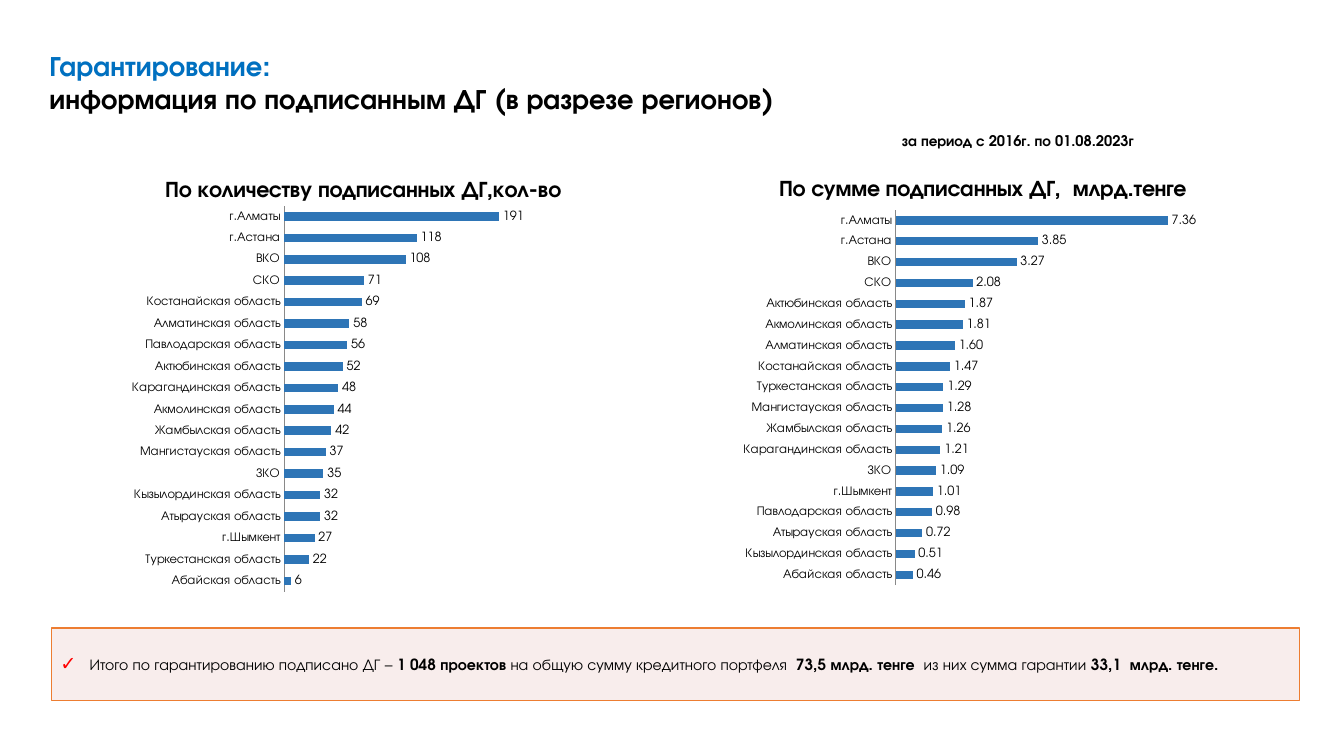
from dataclasses import dataclass

from lxml.etree import SubElement
from pptx import Presentation
from pptx.chart.data import CategoryChartData
from pptx.dml.color import RGBColor
from pptx.enum.chart import XL_CHART_TYPE as ChartType
from pptx.enum.chart import XL_LABEL_POSITION as LabelPosition
from pptx.enum.chart import XL_TICK_MARK as TickMark
from pptx.enum.text import MSO_ANCHOR as Anchor
from pptx.enum.text import MSO_AUTO_SIZE as AutoSize
from pptx.enum.text import PP_ALIGN as Align
from pptx.oxml.ns import qn
from pptx.util import Cm, Pt


@dataclass(frozen=True)
class Theme:
    font: str = "TeX Gyre Adventor"
    black: str = "000000"
    heading: str = "0070C0"
    bar: str = "2E75B6"
    axis: str = "898989"
    summary_fill: str = "F2DCDB"
    summary_line: str = "ED7D31"
    check: str = "FF0000"
    title_size: float = 20
    chart_title_size: float = 16
    summary_size: float = 11
    period_size: float = 10.5
    label_size: float = 9


@dataclass(frozen=True)
class Box:
    left: float
    top: float
    width: float
    height: float


@dataclass(frozen=True)
class RegionChart:
    title: str
    box: Box
    plot: dict[str, float]
    title_corner: dict[str, float]
    axis_max: float
    number_format: str
    values: dict[str, float]


THEME = Theme()

CHARTS = (
    RegionChart(
        "По количеству подписанных ДГ,кол-во",
        Box(1.7, 3.91, 14.76, 11.58),
        {"x": 0.37, "y": 0.11, "w": 0.48, "h": 0.84},
        {"x": 0.16, "y": 0.04},
        250,
        "General",
        {
            "Абайская область": 6, "Туркестанская область": 22, "г.Шымкент": 27,
            "Атырауская область": 32, "Кызылординская область": 32, "ЗКО": 35,
            "Мангистауская область": 37, "Жамбылская область": 42,
            "Акмолинская область": 44, "Карагандинская область": 48,
            "Актюбинская область": 52, "Павлодарская область": 56,
            "Алматинская область": 58, "Костанайская область": 69,
            "СКО": 71, "ВКО": 108, "г.Астана": 118, "г.Алматы": 191,
        },
    ),
    RegionChart(
        "По сумме подписанных ДГ,  млрд.тенге",
        Box(16.64, 4.14, 15.21, 11.53),
        {"x": 0.39, "y": 0.1, "w": 0.49, "h": 0.82},
        {"x": 0.19, "y": 0.02},
        8,
        "#,##0.00",
        {
            "Абайская область": 0.46, "Кызылординская область": 0.51,
            "Атырауская область": 0.72, "Павлодарская область": 0.98,
            "г.Шымкент": 1.01, "ЗКО": 1.09, "Карагандинская область": 1.21,
            "Жамбылская область": 1.26, "Мангистауская область": 1.28,
            "Туркестанская область": 1.29, "Костанайская область": 1.47,
            "Алматинская область": 1.6, "Акмолинская область": 1.81,
            "Актюбинская область": 1.87, "СКО": 2.08, "ВКО": 3.27,
            "г.Астана": 3.85, "г.Алматы": 7.36,
        },
    ),
)

SUMMARY = (
    ("Итого по гарантированию подписано ДГ – ", False),
    ("1 048 проектов ", True),
    ("на общую сумму кредитного портфеля  ", False),
    ("73,5 млрд. тенге  ", True),
    ("из них сумма гарантии", False),
    (" 33,1  млрд. тенге.", True),
)


def rgb(value: str) -> RGBColor:
    return RGBColor.from_string(value)


def style(font, size: float, bold: bool = False, color: str = THEME.black) -> None:
    font.name = THEME.font
    font.size = Pt(size)
    font.bold = bold
    font.color.rgb = rgb(color)


def lengths(box: Box) -> tuple:
    return Cm(box.left), Cm(box.top), Cm(box.width), Cm(box.height)


def move(shape, box: Box) -> None:
    shape.left, shape.top, shape.width, shape.height = lengths(box)


def set_layout(parent, index: int, fractions: dict[str, float], inner: bool = False) -> None:
    for old in parent.findall(qn("c:layout")):
        parent.remove(old)
    layout = SubElement(parent, qn("c:layout"))
    parent.insert(index, layout)
    manual = SubElement(layout, qn("c:manualLayout"))
    if inner:
        SubElement(manual, qn("c:layoutTarget"), val="inner")
    for side in ("x", "y"):
        SubElement(manual, qn(f"c:{side}Mode"), val="edge")
    for side, fraction in fractions.items():
        SubElement(manual, qn(f"c:{side}"), val=str(fraction))


def add_region_chart(slide, region: RegionChart) -> None:
    data = CategoryChartData(number_format=region.number_format)
    data.categories = list(region.values)
    data.add_series(region.title, list(region.values.values()))
    chart = slide.shapes.add_chart(
        ChartType.BAR_CLUSTERED, *lengths(region.box), data
    ).chart
    style(chart.font, THEME.label_size)
    chart.has_legend = False
    chart.has_title = True
    heading = chart.chart_title
    heading.text_frame.text = region.title
    style(heading.text_frame.paragraphs[0].runs[0].font, THEME.chart_title_size, True)
    heading.include_in_layout = False
    title_xml = chart.element.find(".//" + qn("c:title"))
    set_layout(title_xml, 1, region.title_corner)
    set_layout(chart.element.find(".//" + qn("c:plotArea")), 0, region.plot, True)

    regions = chart.category_axis
    regions.major_tick_mark = regions.minor_tick_mark = TickMark.NONE
    regions.has_major_gridlines = False
    regions.format.line.color.rgb = rgb(THEME.axis)
    regions.format.line.width = Pt(0.75)
    style(regions.tick_labels.font, THEME.label_size)
    scale = chart.value_axis
    scale.minimum_scale, scale.maximum_scale = 0, region.axis_max
    scale.has_major_gridlines = False
    scale.visible = False

    plot = chart.plots[0]
    plot.gap_width = 150
    plot.vary_by_categories = False
    bars = plot.series[0].format.fill
    bars.solid()
    bars.fore_color.rgb = rgb(THEME.bar)
    plot.has_data_labels = True
    labels = plot.data_labels
    labels.show_value = True
    labels.position = LabelPosition.OUTSIDE_END
    labels.number_format = region.number_format
    labels.number_format_is_linked = False
    style(labels.font, THEME.label_size)


def fill_title(title) -> None:
    move(title, Box(0.99, 1.09, 21.79, 1.96))
    frame = title.text_frame
    frame.text = "Гарантирование:\vинформация по подписанным ДГ (в разрезе регионов)"
    frame.auto_size = AutoSize.NONE
    frame.vertical_anchor = Anchor.TOP
    heading = frame.paragraphs[0]
    heading.alignment = Align.LEFT
    for run, color in zip(heading.runs, (THEME.heading, THEME.black)):
        style(run.font, THEME.title_size, True, color)


def add_period(slide) -> None:
    period = slide.shapes.add_textbox(*lengths(Box(22.48, 3.2, 6.71, 0.71)))
    period.text_frame.text = "за период с 2016г. по 01.08.2023г"
    style(period.text_frame.paragraphs[0].runs[0].font, THEME.period_size, True)


def fill_summary(summary) -> None:
    move(summary, Box(1.3, 15.82, 31.45, 1.83))
    summary.fill.solid()
    summary.fill.fore_color.rgb = rgb(THEME.summary_fill)
    tint = summary.element.spPr.find(qn("a:solidFill"))[0]
    SubElement(tint, qn("a:alpha"), val="50000")
    summary.line.color.rgb = rgb(THEME.summary_line)
    summary.line.width = Pt(1)
    frame = summary.text_frame
    frame.auto_size = AutoSize.NONE
    frame.vertical_anchor = Anchor.MIDDLE
    frame.margin_left = frame.margin_right = Cm(0.2)
    frame.margin_top = frame.margin_bottom = Cm(0.1)
    total = frame.paragraphs[0]
    total.space_before, total.space_after = Pt(0), Pt(6)
    marks = total._p.get_or_add_pPr()
    marks.set("marL", str(Cm(0.76)))
    marks.set("indent", str(Cm(-0.74)))
    SubElement(SubElement(marks, qn("a:buClr")), qn("a:srgbClr"), val=THEME.check)
    SubElement(marks, qn("a:buSzPct"), val="125000")
    SubElement(marks, qn("a:buFont"), typeface="Arial")
    SubElement(marks, qn("a:buChar"), char="✓")
    for words, bold in SUMMARY:
        run = total.add_run()
        run.text = words
        style(run.font, THEME.summary_size, bold)


def main() -> None:
    deck = Presentation()
    deck.slide_width, deck.slide_height = Cm(33.87), Cm(19.05)
    slide = deck.slides.add_slide(deck.slide_layouts[1])
    fill_title(slide.shapes.title)
    add_period(slide)
    fill_summary(slide.placeholders[1])
    for region in CHARTS:
        add_region_chart(slide, region)
    deck.save("out.pptx")


if __name__ == "__main__":
    main()
